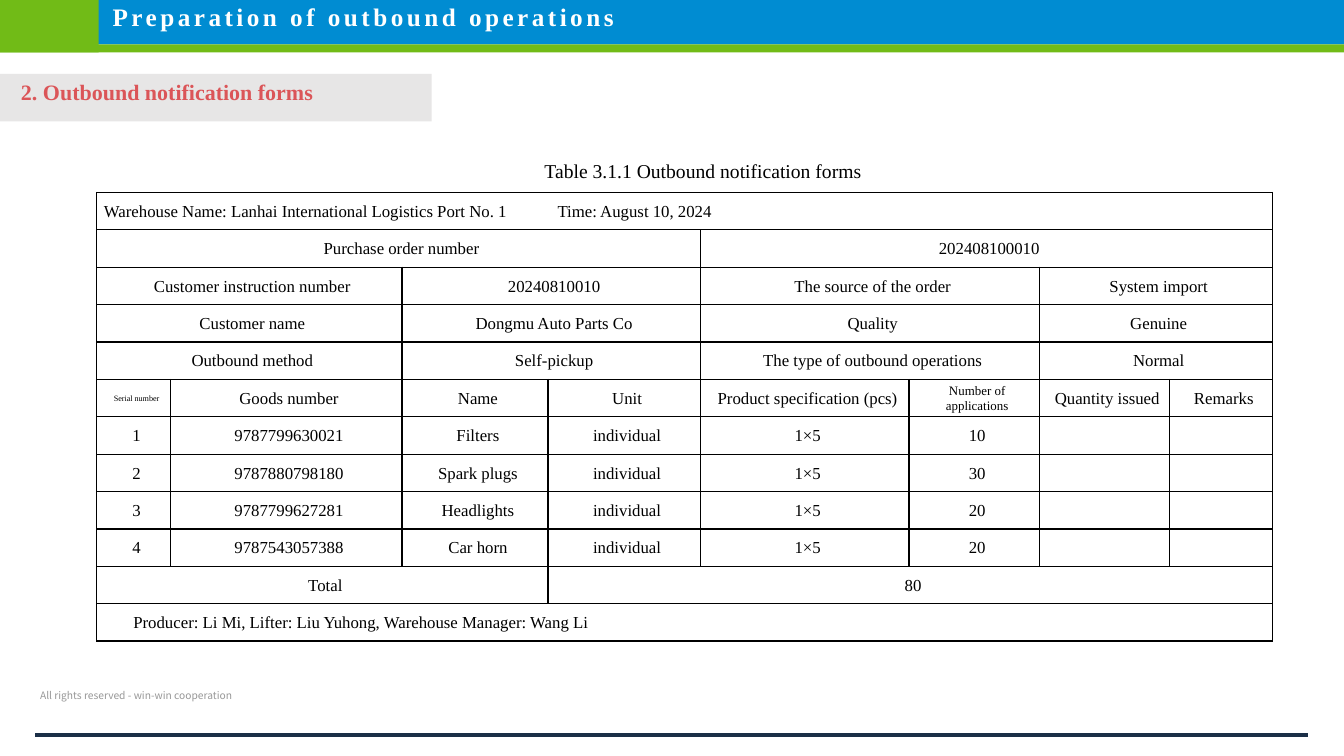
from lxml import etree
from pptx import Presentation
from pptx.dml.color import RGBColor as Rgb
from pptx.enum.shapes import MSO_CONNECTOR as Conn, MSO_SHAPE as Shape
from pptx.enum.text import MSO_ANCHOR as Anchor, PP_ALIGN as Align
from pptx.oxml import parse_xml
from pptx.oxml.ns import nsdecls, qn
from pptx.util import Cm, Pt

HUES = {"blue": "008CD2", "green": "71BB17", "grey": "E7E6E6", "red": "DB5558",
        "navy": "1B2F47", "mute": "989898", "black": "000000", "white": "FFFFFF"}
SERIF, SANS = "Times New Roman", "Noto Sans CJK SC"
WIDE, HIGH = 33.87, 19.05

COLS = [1.85, 5.84, 3.68, 3.84, 5.26, 3.28, 3.28, 2.59]
GOODS = [("9787799630021", "Filters", "10"), ("9787880798180", "Spark plugs", "30"),
         ("9787799627281", "Headlights", "20"), ("9787543057388", "Car horn", "20")]
PAIRS = [
    ["Customer instruction number", "20240810010", "The source of the order", "System import"],
    ["Customer name", "Dongmu Auto Parts Co", "Quality", "Genuine"],
    ["Outbound method", "Self-pickup", "The type of outbound operations", "Normal"],
]
HEADS = ["Serial number", "Goods number", "Name", "Unit", "Product specification (pcs)",
         "Number of applications", "Quantity issued", "Remarks"]
ROWS = [
    ["Table 3.1.1 Outbound notification forms"],
    ["Warehouse Name: Lanhai International Logistics Port No. 1\tTime: August 10, 2024"],
    ["Purchase order number", "202408100010"],
    *PAIRS,
    HEADS,
    *[[str(num), code, name, "individual", "1×5", count, "", ""]
      for num, (code, name, count) in enumerate(GOODS, 1)],
    ["Total", "80"],
    ["Producer: Li Mi, Lifter: Liu Yuhong, Warehouse Manager: Wang Li"],
]
SPANS = {"Total": [3, 5]}
SIZES = {ROWS[0][0]: 14, "Serial number": 5.8, "Number of applications": 9.2}
FIRST = {ROWS[0][0]: 0.79, ROWS[-1][0]: 0.74}
LEFT = (ROWS[1][0], ROWS[-1][0])


def hue(name):
    return Rgb.from_string(HUES[name])


def style(para, size, color, face=SERIF, bold=False):
    font = para.font
    font.size, font.name, font.bold = Pt(size), face, bold
    font.color.rgb = hue(color)


def block(slide, color, x, y, w, h):
    rect = slide.shapes.add_shape(Shape.RECTANGLE, Cm(x), Cm(y), Cm(w), Cm(h))
    rect.shadow.inherit = False
    rect.fill.solid()
    rect.fill.fore_color.rgb = hue(color)
    rect.line.fill.background()
    return rect


def label(slide, text, x, y, w, h, pad=0.25):
    frame = slide.shapes.add_textbox(Cm(x), Cm(y), Cm(w), Cm(h)).text_frame
    frame.word_wrap = True
    frame.margin_left = frame.margin_right = Cm(pad)
    frame.text = text
    return frame.paragraphs[0]


def banner(slide, x, y, w, h):
    block(slide, "blue", x, y, w, h - 0.2)
    block(slide, "green", x, y, 2.49, h)
    block(slide, "green", x, y + h - 0.2, w, 0.2)
    para = label(slide, "Preparation of outbound operations", x + 2.59, y, 16.94, 1.02)
    style(para, 18, "white", bold=True)
    para.runs[0].font._element.set("spc", "250")


def topic(slide, x, y, w, h):
    frame = block(slide, "grey", x, y, w, h).text_frame
    frame.vertical_anchor = Anchor.TOP
    frame.margin_left = Cm(0.53)
    frame.text = "2. Outbound notification forms"
    para = frame.paragraphs[0]
    para.alignment = Align.LEFT
    style(para, 15.7, "red", bold=True)


def border(cell, sides):
    props = cell._tc.get_or_add_tcPr()
    for spot, side in enumerate("LRTB"):
        if side in sides:
            ink = f'<a:solidFill><a:srgbClr val="{HUES["black"]}"/></a:solidFill>'
        else:
            ink = "<a:noFill/>"
        props.insert(spot, parse_xml(
            f'<a:ln{side} {nsdecls("a")} w="{Pt(1)}">{ink}</a:ln{side}>'))


def write(cell, text):
    cell.text = text
    para = cell.text_frame.paragraphs[0]
    para.alignment = Align.LEFT if text in LEFT else Align.CENTER
    props = para._p.get_or_add_pPr()
    props.set("marL", str(Cm(0.15)))
    props.set("indent", str(Cm(FIRST.get(text, 0))))
    if "\t" in text:
        tabs = etree.SubElement(props, qn("a:tabLst"))
        etree.SubElement(tabs, qn("a:tab"), pos=str(Cm(10.6)), algn="l")
    style(para, SIZES.get(text, 12), "black")


def form(slide, x, y, w, h):
    cap = 1.09
    step = (h - cap) / (len(ROWS) - 1)
    frame = slide.shapes.add_table(len(ROWS), len(COLS), Cm(x), Cm(y), Cm(w), Cm(h))
    table = frame.table
    table.first_row = table.horz_banding = False
    for col, size in zip(table.columns, COLS):
        col.width = Cm(size)
    for r, texts in enumerate(ROWS):
        table.rows[r].height = Cm(step if r else cap)
        for c in range(len(COLS)):
            cell = table.cell(r, c)
            cell.fill.background()
            cell.vertical_anchor = Anchor.MIDDLE
            cell.margin_left = cell.margin_right = cell.margin_top = Cm(0.03)
            cell.margin_bottom = 0
            border(cell, "LRTB" if r else "B")
        even = [len(COLS) // len(texts)] * len(texts)
        c = 0
        for text, span in zip(texts, SPANS.get(texts[0], even)):
            cell = table.cell(r, c)
            if span > 1:
                cell.merge(table.cell(r, c + span - 1))
            write(cell, text)
            c += span


def footer(slide, x, y, w, h):
    para = label(slide, "All rights reserved - win-win cooperation", x, y, 5.38, 0.94, 0.13)
    style(para, 7.3, "mute", SANS)
    line = slide.shapes.add_connector(Conn.STRAIGHT, Cm(x + w), Cm(y + h), Cm(x), Cm(y + h))
    line.line.color.rgb = hue("navy")
    line.line.width = Pt(3)
    etree.SubElement(line._element.spPr, qn("a:effectLst"))


def main():
    deck = Presentation()
    deck.slide_width, deck.slide_height = Cm(WIDE), Cm(HIGH)
    slide = deck.slides.add_slide(deck.slide_layouts[6])
    banner(slide, 0, -0.08, WIDE, 1.4)
    topic(slide, 0, 1.86, 10.88, 1.2)
    form(slide, 2.44, 3.76, sum(COLS), 12.4)
    footer(slide, 0.88, 17.25, 32.08, 1.27)
    deck.save("out.pptx")


if __name__ == "__main__":
    main()
